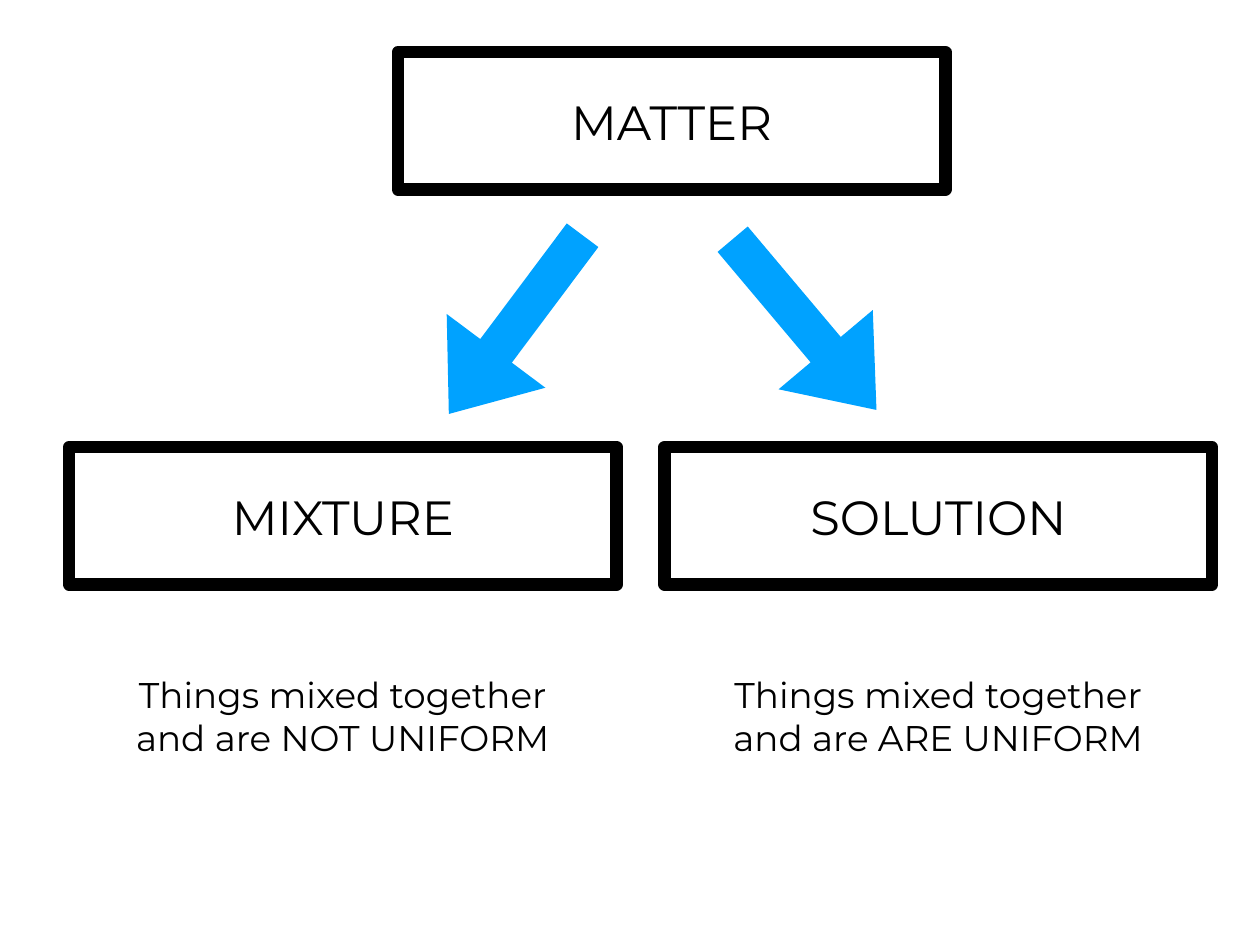
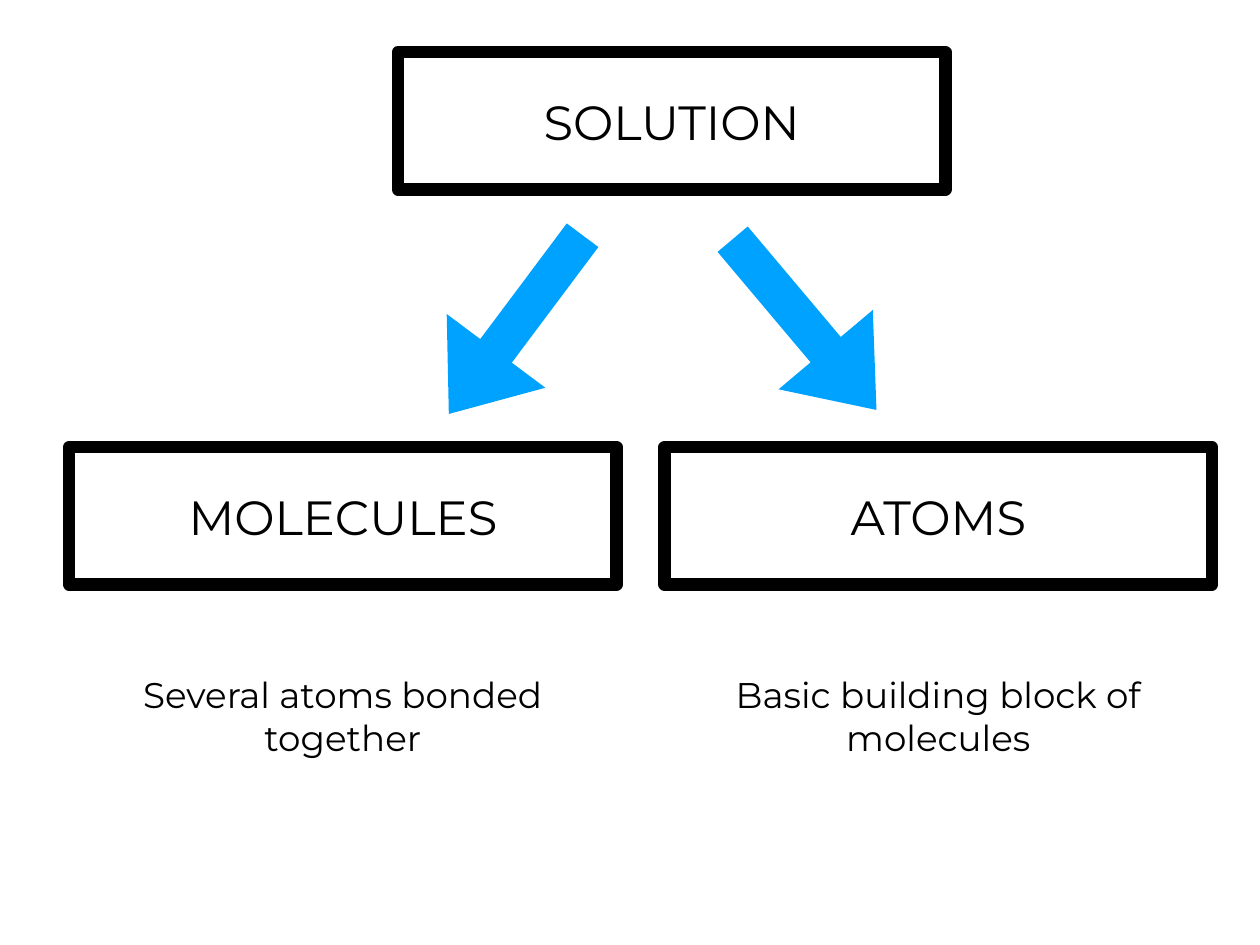
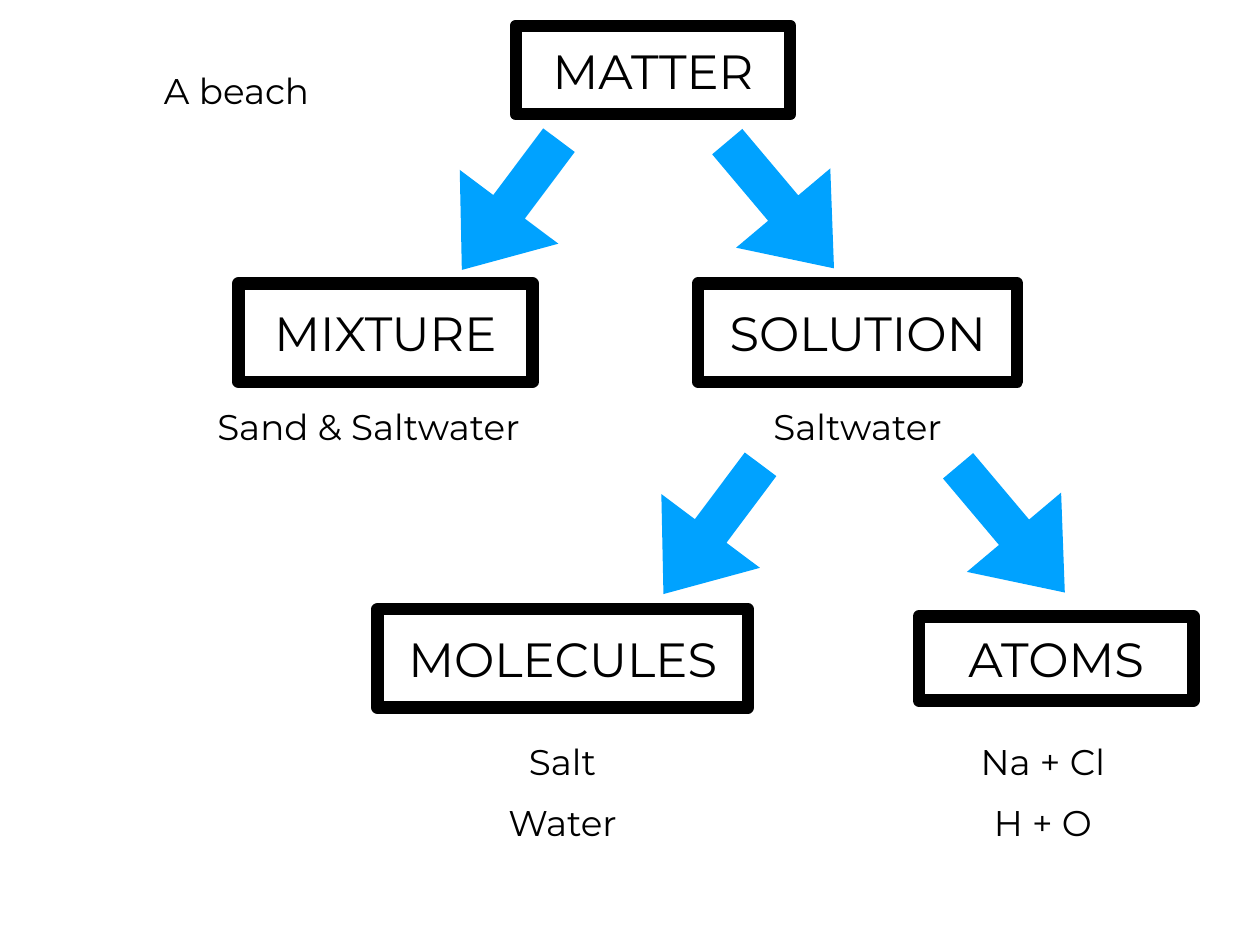
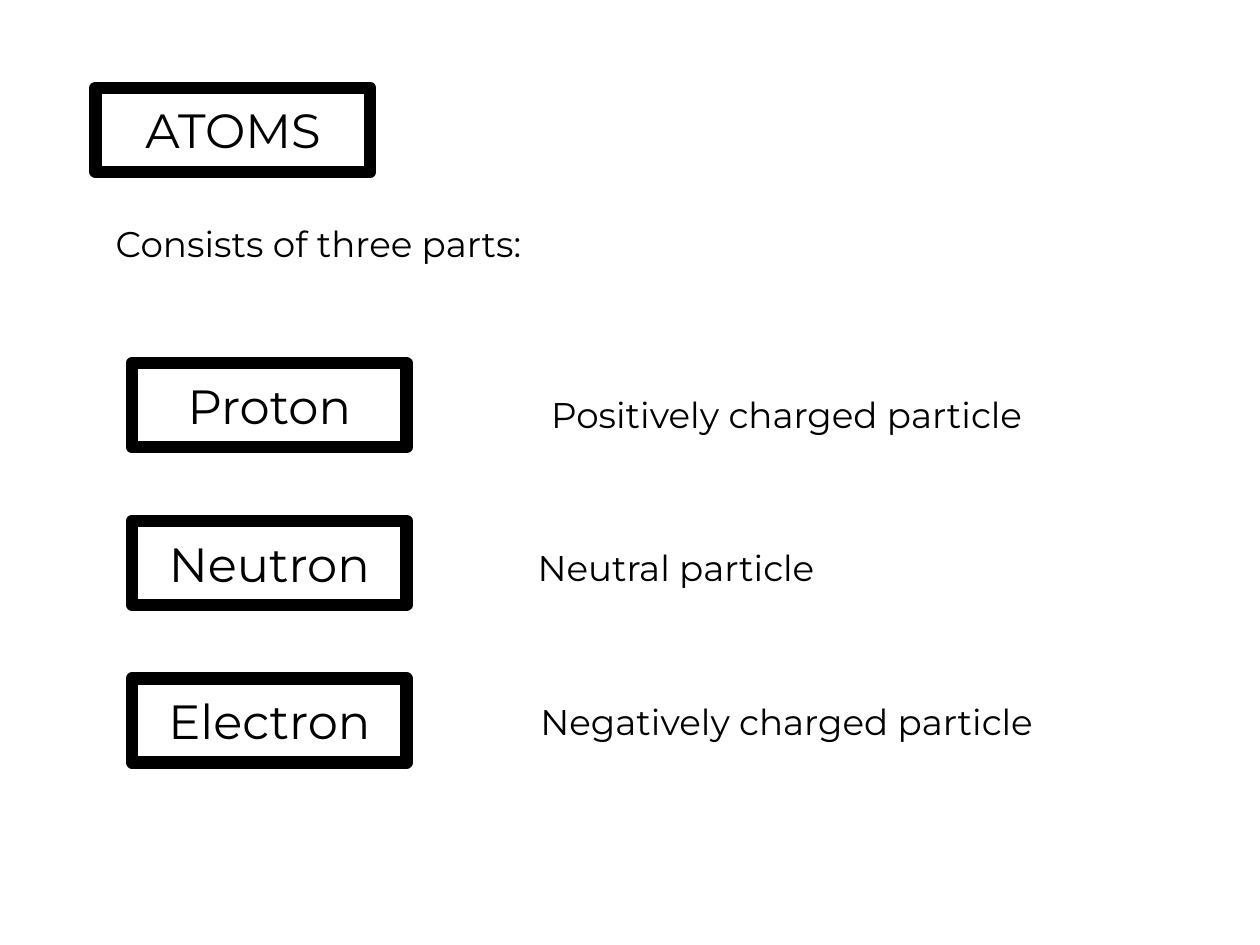
from pptx import Presentation
from pptx.dml.color import RGBColor
from pptx.enum.shapes import MSO_SHAPE
from pptx.enum.text import MSO_ANCHOR, MSO_AUTO_SIZE, PP_ALIGN
from pptx.util import Inches, Pt

RECTANGLE, ARROW = MSO_SHAPE.RECTANGLE, MSO_SHAPE.RIGHT_ARROW
MIDDLE, CENTER = MSO_ANCHOR.MIDDLE, PP_ALIGN.CENTER
GROW = MSO_AUTO_SIZE.SHAPE_TO_FIT_TEXT

WIDTH, HEIGHT = 14.22, 10.67
FONT = "Montserrat"
BLACK, WHITE, BLUE = "000000", "FFFFFF", "00A2FF"
TERM_SIZE, NOTE_SIZE = 39, 29
BORDER, INSET = 10, 0.06
ARROW_HEIGHT, ARROW_ADJUSTMENTS = 1.39, (0.32, 0.64)
LEFT_TURN, RIGHT_TURN = 126.8, 49.9

SPLITS = [
    ("MATTER", [
        ("MIXTURE", "Things mixed together and are NOT UNIFORM"),
        ("SOLUTION", "Things mixed together and are ARE UNIFORM"),
    ]),
    ("SOLUTION", [
        ("MOLECULES", "Several atoms bonded together"),
        ("ATOMS", "Basic building block of molecules"),
    ]),
]
SPLIT_COLUMNS = (3.87, 10.59)
SPLIT_BOX = (6.18, 1.55)

BEACH_TERMS = [
    ("MATTER", 7.37, 0.79, 3.1, 1),
    ("MIXTURE", 4.35, 3.755, 3.32, 1.11),
    ("SOLUTION", 9.68, 3.755, 3.6, 1.11),
    ("MOLECULES", 6.35, 7.435, 4.18, 1.11),
    ("ATOMS", 11.92, 7.435, 3.1, 0.95),
]
BEACH_EXAMPLES = [
    (["A beach"], 2.67, 1.02, 4.32),
    (["Sand & Saltwater"], 4.16, 4.81, 5.34),
    (["Saltwater"], 9.68, 4.81, 5.34),
    (["Salt", "Water"], 6.35, 8.6, 5.34),
    (["Na + Cl", "H + O"], 11.77, 8.6, 2.82),
]
BEACH_ARROWS = [(5.76, 8.81, 2.315), (8.035, 11.415, 5.975)]

PARTICLES = [
    ("Proton", "Positively charged particle", 8.88, 6.98),
    ("Neutron", "Neutral particle", 7.63, 3.92),
    ("Electron", "Negatively charged particle", 8.88, 6.98),
]
PARTICLE_BOX = (3.1, 0.95)
LINE_HEIGHT, TWO_LINES = 0.68, 1.25


def color(value):
    return RGBColor.from_string(value)


def frame(x, y, width, height):
    return [Inches(v) for v in (x - width / 2, y - height / 2, width, height)]


def write(part, text, size):
    body = part.text_frame
    body.word_wrap = True
    body.vertical_anchor = MIDDLE
    body.margin_left = body.margin_right = Inches(INSET)
    body.margin_top = body.margin_bottom = Inches(INSET)
    paragraph = body.paragraphs[0]
    paragraph.alignment = CENTER
    run = paragraph.add_run()
    run.text = text
    run.font.name = FONT
    run.font.size = Pt(size)
    run.font.color.rgb = color(BLACK)


def solid(slide, kind, place, fill):
    part = slide.shapes.add_shape(kind, *frame(*place))
    part.shadow.inherit = False
    part.fill.solid()
    part.fill.fore_color.rgb = color(fill)
    return part


def term(slide, text, x, y, width, height):
    box = solid(slide, RECTANGLE, (x, y, width, height), WHITE)
    box.line.color.rgb = color(BLACK)
    box.line.width = Pt(BORDER)
    write(box, text, TERM_SIZE)


def note(slide, text, x, y, width, height=LINE_HEIGHT):
    caption = slide.shapes.add_textbox(*frame(x, y, width, height))
    write(caption, text, NOTE_SIZE)
    caption.text_frame.auto_size = GROW


def fork(slide, left_x, right_x, y, left_length, right_length):
    for x, length, turn in ((left_x, left_length, LEFT_TURN),
                            (right_x, right_length, RIGHT_TURN)):
        arrow = solid(slide, ARROW, (x, y, length, ARROW_HEIGHT), BLUE)
        arrow.line.fill.background()
        arrow.rotation = turn
        for index, share in enumerate(ARROW_ADJUSTMENTS):
            arrow.adjustments[index] = share


def split_slide(slide, parent, children):
    term(slide, parent, 7.58, 1.365, *SPLIT_BOX)
    fork(slide, 5.82, 9.08, 3.665, 2.52, 2.52)
    for x, (name, meaning) in zip(SPLIT_COLUMNS, children):
        term(slide, name, x, 5.825, *SPLIT_BOX)
        note(slide, meaning, x, 8.085, 5.34, TWO_LINES)


def beach_slide(slide):
    for entry in BEACH_TERMS:
        term(slide, *entry)
    for left_x, right_x, y in BEACH_ARROWS:
        fork(slide, left_x, right_x, y, 1.83, 1.87)
    for examples, x, y, width in BEACH_EXAMPLES:
        for row, example in enumerate(examples):
            note(slide, example, x, y + row * LINE_HEIGHT, width)


def atom_slide(slide):
    term(slide, "ATOMS", 2.63, 1.465, *PARTICLE_BOX)
    note(slide, "Consists of three parts: ", 3.65, 2.75, 5.34)
    for row, (name, charge, x, width) in enumerate(PARTICLES):
        term(slide, name, 3.04, 4.575 + row * 1.78, *PARTICLE_BOX)
        note(slide, charge, x, 4.68 + row * 1.73, width)


def main():
    deck = Presentation()
    deck.slide_width, deck.slide_height = Inches(WIDTH), Inches(HEIGHT)
    background = deck.slide_master.background.fill
    background.solid()
    background.fore_color.rgb = color(WHITE)

    def new_slide():
        return deck.slides.add_slide(deck.slide_layouts[6])

    for parent, children in SPLITS:
        split_slide(new_slide(), parent, children)
    beach_slide(new_slide())
    atom_slide(new_slide())
    deck.save("out.pptx")


if __name__ == "__main__":
    main()
